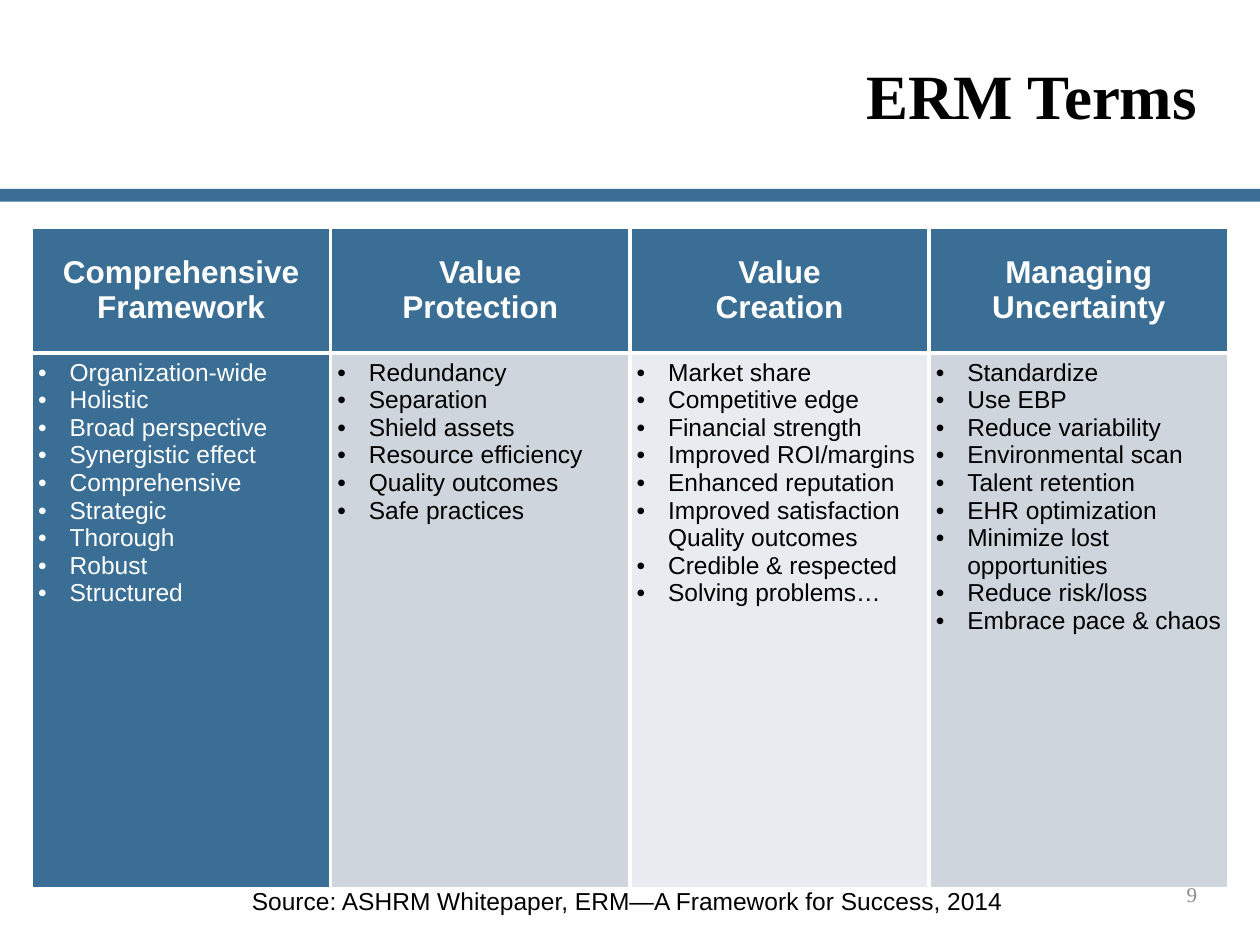
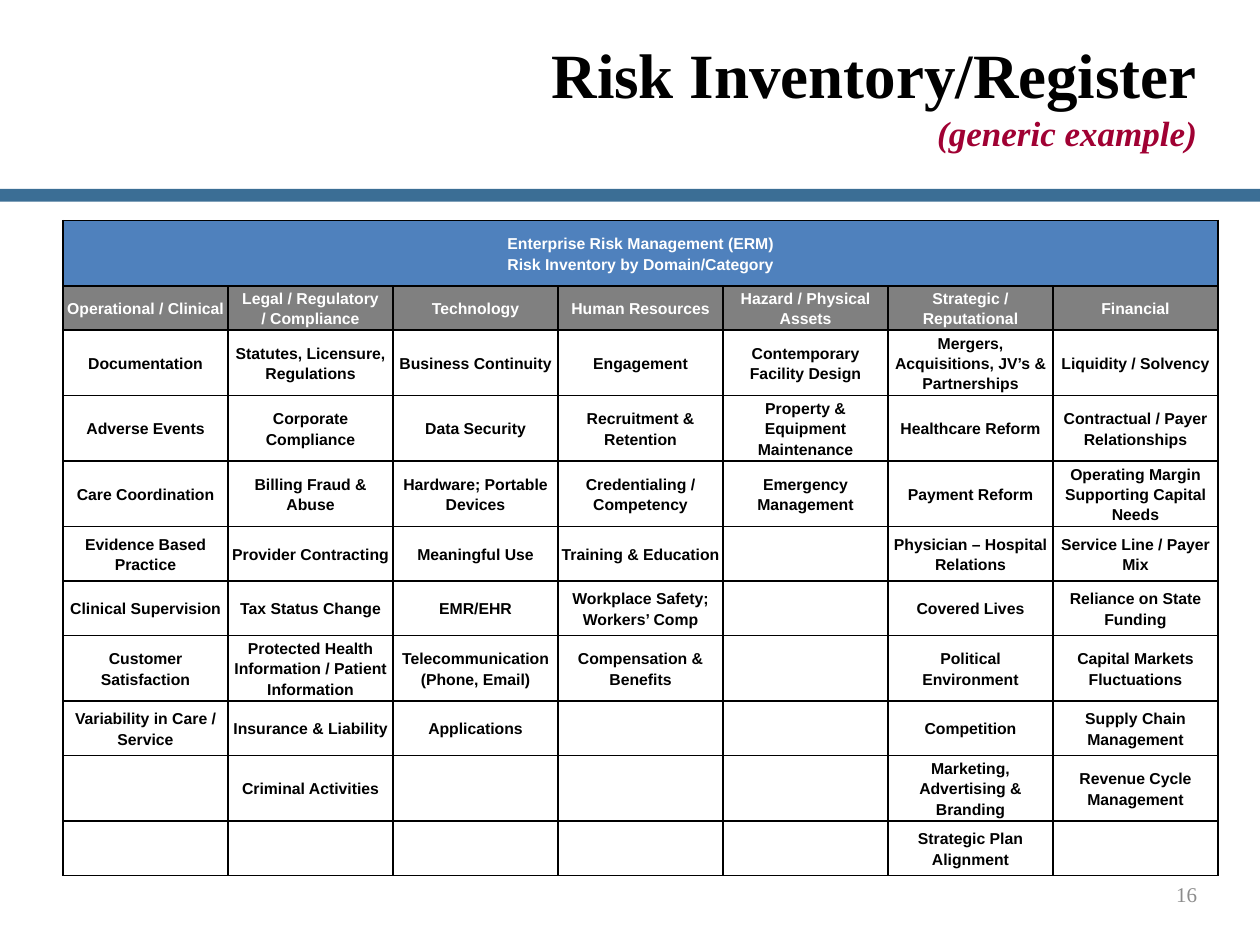
"""Build two enterprise risk management slides: a terms table and a risk register."""
from lxml.etree import SubElement
from pptx import Presentation
from pptx.dml.color import RGBColor
from pptx.enum.shapes import MSO_SHAPE
from pptx.enum.text import MSO_ANCHOR, PP_ALIGN
from pptx.oxml.ns import qn
from pptx.util import Pt

WHITE, BLACK, GRAY, CRIMSON = "FFFFFF", "000000", "8C8C8C", "A00133"
BAND, MIST, PALE = "3B6E95", "CED5DD", "E8EBEF"
REGISTER_BLUE, DOMAIN_GRAY = "4F81BD", "808080"
SANS, SERIF = "Arial", "Times New Roman"

TITLE_BOX = (172.8, 18, 518.4, 72)
NUMBER_BOX = (619.2, 496.8, 72, 28.8)
TERMS_BOX = (18, 129.6, 684, 378)
SOURCE_BOX = (136.8, 502.6, 445.7, 24.2)
REGISTER_BOX = (36, 126, 660, 374.4)

TERMS = [
    ("Comprehensive\vFramework", BAND, WHITE, [
        "Organization-wide", "Holistic", "Broad perspective", "Synergistic effect",
        "Comprehensive", "Strategic", "Thorough", "Robust", "Structured"]),
    ("Value\nProtection", MIST, BLACK, [
        "Redundancy", "Separation", "Shield assets", "Resource efficiency",
        "Quality outcomes", "Safe practices"]),
    ("Value\nCreation", PALE, BLACK, [
        "Market share", "Competitive edge", "Financial strength", "Improved ROI/margins",
        "Enhanced reputation", "Improved satisfaction Quality outcomes",
        "Credible & respected", "Solving problems…"]),
    ("Managing\nUncertainty", MIST, BLACK, [
        "Standardize", "Use EBP", "Reduce variability", "Environmental scan",
        "Talent retention", "EHR optimization", "Minimize lost opportunities",
        "Reduce risk/loss", "Embrace pace & chaos"]),
]

REGISTER_HEADING = "Enterprise Risk Management (ERM)\nRisk Inventory by Domain/Category"
RISKS_BY_DOMAIN = {
    "Operational / Clinical": [
        "Documentation", "Adverse Events", "Care Coordination", "Evidence Based Practice",
        "Clinical Supervision", "Customer Satisfaction", "Variability in Care / Service"],
    "Legal / Regulatory\n/ Compliance": [
        "Statutes, Licensure, Regulations", "Corporate Compliance", "Billing Fraud & Abuse",
        "Provider Contracting", "Tax Status Change",
        "Protected Health Information / Patient Information",
        "Insurance & Liability", "Criminal Activities"],
    "Technology": [
        "Business Continuity", "Data Security", "Hardware; Portable Devices",
        "Meaningful Use", "EMR/EHR", "Telecommunication (Phone, Email)", "Applications"],
    "Human Resources": [
        "Engagement", "Recruitment & Retention", "Credentialing / Competency",
        "Training & Education", "Workplace Safety; Workers’ Comp",
        "Compensation & Benefits"],
    "Hazard / Physical Assets": [
        "Contemporary Facility Design", "Property & Equipment Maintenance",
        "Emergency Management"],
    "Strategic / Reputational": [
        "Mergers, Acquisitions, JV’s & Partnerships", "Healthcare Reform",
        "Payment Reform", "Physician – Hospital Relations", "Covered Lives",
        "Political Environment", "Competition", "Marketing, Advertising & Branding",
        "Strategic Plan Alignment"],
    "Financial": [
        "Liquidity / Solvency", "Contractual / Payer Relationships",
        "Operating Margin Supporting Capital Needs", "Service Line / Payer Mix",
        "Reliance on State Funding", "Capital Markets Fluctuations",
        "Supply Chain Management", "Revenue Cycle Management"],
}
TALL, SHORT, DOMAIN_ROW = 37.5, 31.1, 25
REGISTER_ROWS = [TALL, DOMAIN_ROW, TALL, TALL, TALL, SHORT, SHORT, TALL, SHORT, TALL, SHORT]


def rgb(code):
    """Turn a hex string into a colour."""
    return RGBColor.from_string(code)


def points(box):
    """Convert a box of numbers to lengths in points."""
    return [Pt(length) for length in box]


def set_font(font, face, size, color, bold=False, italic=False):
    """Apply one complete font setting."""
    font.name, font.size, font.bold, font.italic = face, Pt(size), bold, italic
    font.color.rgb = rgb(color)


def add_bullet(paragraph, indent):
    """Give a paragraph a hanging round bullet."""
    properties = paragraph._p.get_or_add_pPr()
    properties.set("marL", str(Pt(indent)))
    properties.set("indent", str(-Pt(indent)))
    SubElement(properties, qn("a:buFont")).set("typeface", SANS)
    SubElement(properties, qn("a:buChar")).set("char", "•")


def add_line(slide, box, text, align, face, size, color, bold=False, wrap=True):
    """Place a one-paragraph text box and return its paragraph."""
    frame = slide.shapes.add_textbox(*points(box)).text_frame
    frame.word_wrap = wrap
    frame.vertical_anchor = MSO_ANCHOR.MIDDLE
    line = frame.paragraphs[0]
    line.text, line.alignment = text, align
    set_font(line.font, face, size, color, bold)
    return line


def add_grid(slide, box, row_heights, column_count):
    """Place a plain table with equal columns inside a box."""
    grid = slide.shapes.add_table(len(row_heights), column_count, *points(box)).table
    grid.first_row = grid.horz_banding = False
    for column in grid.columns:
        column.width = Pt(box[2] / column_count)
    for row, height in zip(grid.rows, row_heights):
        row.height = Pt(height)
    return grid


def style_cell(cell, fill, border, border_width, margins, anchor=MSO_ANCHOR.MIDDLE):
    """Set the borders, fill, margins and anchor of a cell."""
    properties = cell._tc.get_or_add_tcPr()
    for side in ("lnL", "lnR", "lnT", "lnB"):
        edge = SubElement(properties, qn(f"a:{side}"), w=str(Pt(border_width)))
        SubElement(SubElement(edge, qn("a:solidFill")), qn("a:srgbClr")).set("val", border)
    if fill:
        cell.fill.solid()
        cell.fill.fore_color.rgb = rgb(fill)
    else:
        cell.fill.background()
    cell.margin_left, cell.margin_top, cell.margin_right, cell.margin_bottom = points(margins)
    cell.vertical_anchor = anchor


def write_cell(cell, text, size, color, bold=True, spacing=None, indent=None):
    """Write lines into a cell, centred or bulleted when an indent is given."""
    cell.text = text
    for line in cell.text_frame.paragraphs:
        line.line_spacing = spacing
        if indent:
            add_bullet(line, indent)
        else:
            line.alignment = PP_ALIGN.CENTER
        set_font(line.font, SANS, size, color, bold)


def add_header(deck, title, subtitle=None):
    """Add a slide with the shared band and title."""
    slide = deck.slides.add_slide(deck.slide_layouts[6])
    band = slide.shapes.add_shape(MSO_SHAPE.RECTANGLE, *points((0, 108, 720, 7.2)))
    band.shadow.inherit = False
    band.fill.solid()
    band.fill.fore_color.rgb = rgb(BAND)
    band.line.fill.background()
    heading = add_line(slide, TITLE_BOX, title, PP_ALIGN.RIGHT, SERIF, 36, BLACK, bold=True)
    if subtitle:
        heading.add_line_break()
        example = heading.add_run()
        example.text = subtitle
        set_font(example.font, SERIF, 20, CRIMSON, bold=True, italic=True)
    return slide


def add_number(slide, number):
    """Place the slide number in front of the content."""
    add_line(slide, NUMBER_BOX, str(number), PP_ALIGN.RIGHT, SERIF, 12, GRAY)


def add_terms(slide, box):
    """Place the table of terms, one column for each theme."""
    grid = add_grid(slide, box, [72, box[3] - 72], len(TERMS))
    for column, (theme, fill, color, terms) in enumerate(TERMS):
        head, body = grid.cell(0, column), grid.cell(1, column)
        style_cell(head, BAND, WHITE, 2.25, (3.6, 3.6, 3.6, 3.6))
        write_cell(head, theme, 18, WHITE)
        style_cell(body, fill, WHITE, 2.25, (3.8, 3.6, 1.2, 36), MSO_ANCHOR.TOP)
        write_cell(body, "\n".join(terms), 14, color, bold=False, indent=18)


def add_register(slide, box):
    """Place the risk register with a merged heading and one column per domain."""
    grid = add_grid(slide, box, REGISTER_ROWS, len(RISKS_BY_DOMAIN))
    row_fills = [REGISTER_BLUE, DOMAIN_GRAY]
    for column, (domain, risks) in enumerate(RISKS_BY_DOMAIN.items()):
        entries = ["" if column else REGISTER_HEADING, domain, *risks]
        entries += [""] * (len(REGISTER_ROWS) - len(entries))
        for row, entry in enumerate(entries):
            cell = grid.cell(row, column)
            fill = row_fills[row] if row < len(row_fills) else None
            style_cell(cell, fill, BLACK, 1, (2.1, 0, 2.1, 0))
            write_cell(cell, entry, 9, WHITE if fill else BLACK, spacing=1.15)
    grid.cell(0, 0).merge(grid.cell(0, len(RISKS_BY_DOMAIN) - 1))


def main():
    """Build and save the slides."""
    deck = Presentation()
    deck.slide_width, deck.slide_height = Pt(720), Pt(540)
    terms_slide = add_header(deck, "ERM Terms")
    add_terms(terms_slide, TERMS_BOX)
    add_line(terms_slide, SOURCE_BOX,
             "Source: ASHRM Whitepaper, ERM—A Framework for Success, 2014",
             PP_ALIGN.LEFT, SANS, 14, BLACK, wrap=False)
    add_number(terms_slide, 9)
    register_slide = add_header(deck, "Risk Inventory/Register", "(generic example)")
    add_register(register_slide, REGISTER_BOX)
    add_number(register_slide, 16)
    deck.save("out.pptx")


if __name__ == "__main__":
    main()
